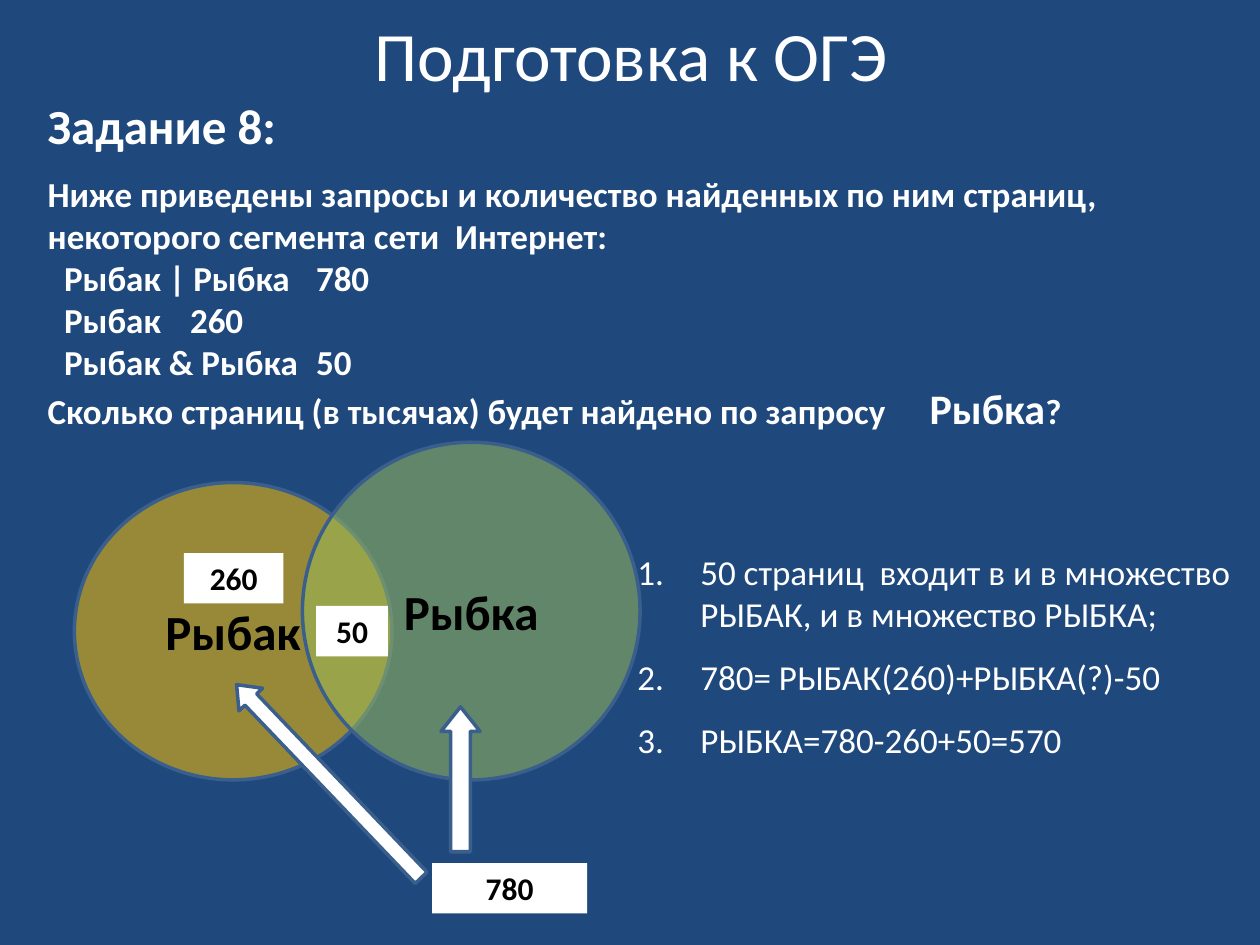
from lxml import etree
from pptx import Presentation
from pptx.dml.color import RGBColor
from pptx.enum import shapes, text
from pptx.oxml.ns import qn
from pptx.util import Inches, Pt

WHITE, BLACK, EDGE = "FFFFFF", "000000", "3A5F8C"
MID = text.PP_ALIGN.CENTER
KIND = shapes.MSO_SHAPE


def color(code):
    return RGBColor.from_string(code)


def paint(fill, code, alpha=None):
    fill.solid()
    fill.fore_color.rgb = color(code)
    if alpha:
        node = fill._xPr.find(qn("a:solidFill"))[0]
        etree.SubElement(node, qn("a:alpha"), val=str(alpha * 1000))


def write(para, words, size, code=WHITE, bold=True):
    run = para.add_run()
    run.text = words
    style = {"name": "Calibri", "size": Pt(size), "bold": bold}
    for key, value in style.items():
        setattr(run.font, key, value)
    run.font.color.rgb = color(code)


def set_para(para, left=0, hang=0, tab=None, number=False):
    props = para._p.get_or_add_pPr()
    props.set("marL", str(Inches(left)))
    props.set("indent", str(Inches(-hang)))
    if number:
        etree.SubElement(props, qn("a:buFont"), typeface="+mj-lt")
        etree.SubElement(props, qn("a:buAutoNum"), type="arabicPeriod")
    if tab:
        tabs = etree.SubElement(props, qn("a:tabLst"))
        etree.SubElement(tabs, qn("a:tab"), pos=str(Inches(tab)), algn="l")


def add_box(slide, at, wrap=True, grow=True):
    frame = slide.shapes.add_textbox(*map(Inches, at)).text_frame
    frame.word_wrap = wrap
    if grow:
        frame.auto_size = text.MSO_AUTO_SIZE.SHAPE_TO_FIT_TEXT
    return frame


def add_lines(frame, count):
    return [frame.paragraphs[0]] + [frame.add_paragraph() for _ in range(count - 1)]


def add_form(slide, kind, at, fill, alpha=None, edge=True):
    form = slide.shapes.add_shape(kind, *map(Inches, at))
    form.shadow.inherit = False
    paint(form.fill, fill, alpha)
    if edge:
        form.line.color.rgb = color(EDGE)
        form.line.width = Pt(2)
    else:
        form.line.fill.background()
    return form


def add_label(form, words, size):
    frame = form.text_frame
    frame.vertical_anchor = text.MSO_ANCHOR.MIDDLE
    para = frame.paragraphs[0]
    para.alignment = MID
    write(para, words, size, BLACK)


def add_arrow(slide, at, turn=0):
    arrow = add_form(slide, KIND.UP_ARROW, at, WHITE)
    arrow.adjustments[0] = 0.5
    arrow.adjustments[1] = 0.63
    arrow.rotation = turn


def add_task(slide):
    para = add_box(slide, (0.28, 0.71, 2.04, 0.57), wrap=False).paragraphs[0]
    write(para, "Задание 8:", 28)

    rows = [("Рыбак | Рыбка", 780), ("Рыбак", 260), ("Рыбак & Рыбка", 50)]
    frame = add_box(slide, (0.28, 1.32, 9.05, 2.19))
    intro, *lines, ask = add_lines(frame, len(rows) + 2)
    write(intro, "Ниже приведены запросы и количество найденных по ним страниц, "
                 "некоторого сегмента сети  Интернет:", 20)
    for para, (query, pages) in zip(lines, rows):
        set_para(para, left=0.13, tab=3)
        write(para, f"{query}\t{pages}", 20)
    set_para(ask, tab=6.97)
    write(ask, "Сколько страниц (в тысячах) будет найдено по запросу\t", 20)
    write(ask, "Рыбка", 24)
    write(ask, "?", 20)


def add_steps(slide):
    steps = ["50 страниц  входит в и в множество РЫБАК, и в множество РЫБКА;",
             "780= РЫБАК(260)+РЫБКА(?)-50",
             "РЫБКА=780-260+50=570"]
    frame = add_box(slide, (4.96, 4.32, 4.92, 1.78))
    for para, step in zip(add_lines(frame, len(steps)), steps):
        para.space_before = Pt(12)
        set_para(para, left=0.5, hang=0.5, number=True)
        write(para, step, 20, bold=False)


def main():
    deck = Presentation()
    deck.slide_width, deck.slide_height = Inches(10), Inches(7.5)
    slide = deck.slides.add_slide(deck.slide_layouts[6])
    paint(slide.background.fill, "1F497D")

    # Title and task
    title = add_box(slide, (0.51, 0.13, 9, 0.59), grow=False)
    title.vertical_anchor = text.MSO_ANCHOR.MIDDLE
    title.paragraphs[0].alignment = MID
    write(title.paragraphs[0], "Подготовка к ОГЭ", 39.6, bold=False)
    add_task(slide)

    # Overlapping sets
    sets = [("Рыбак", (0.59, 3.83, 2.52, 2.36), "FFC000"),
            ("Рыбка", (2.4, 3.51, 2.68, 2.68), "9BBB59")]
    for name, at, fill in sets:
        add_label(add_form(slide, KIND.OVAL, at, fill, 54), name, 28)

    # Page counts
    counts = [("50", 2.51, 4.81, 0.57), ("260", 1.46, 4.39, 0.79),
              ("780", 3.43, 6.85, 1.23)]
    for count, left, top, width in counts:
        at = (left, top, width, 0.4)
        add_label(add_form(slide, KIND.RECTANGLE, at, WHITE, edge=False), count, 18)

    # Solution and arrows from the total to the sets
    add_steps(slide)
    add_arrow(slide, (2.48, 5.14, 0.26, 2.12), 316.3)
    add_arrow(slide, (3.5, 5.61, 0.31, 1.15))

    deck.save("out.pptx")


if __name__ == "__main__":
    main()
